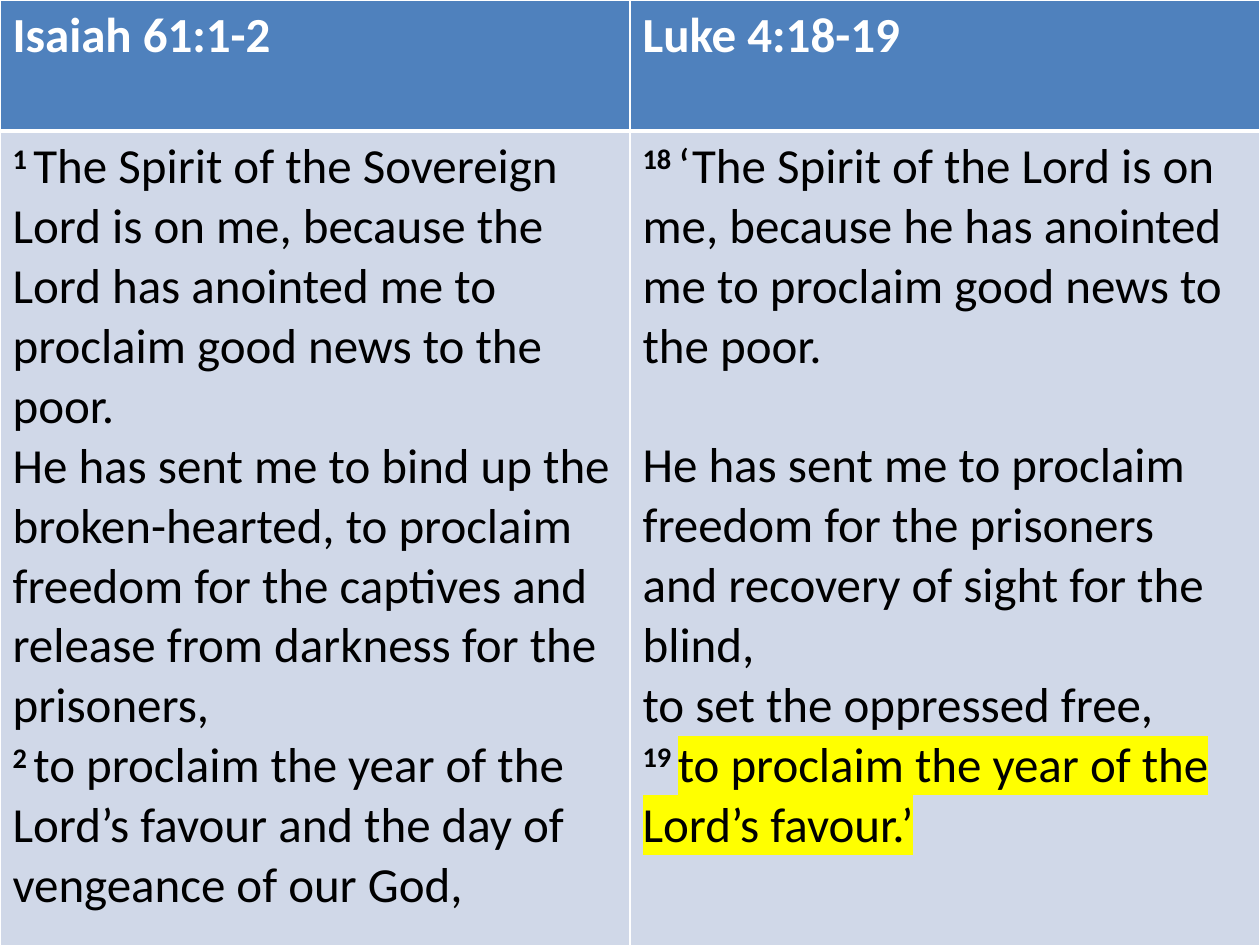
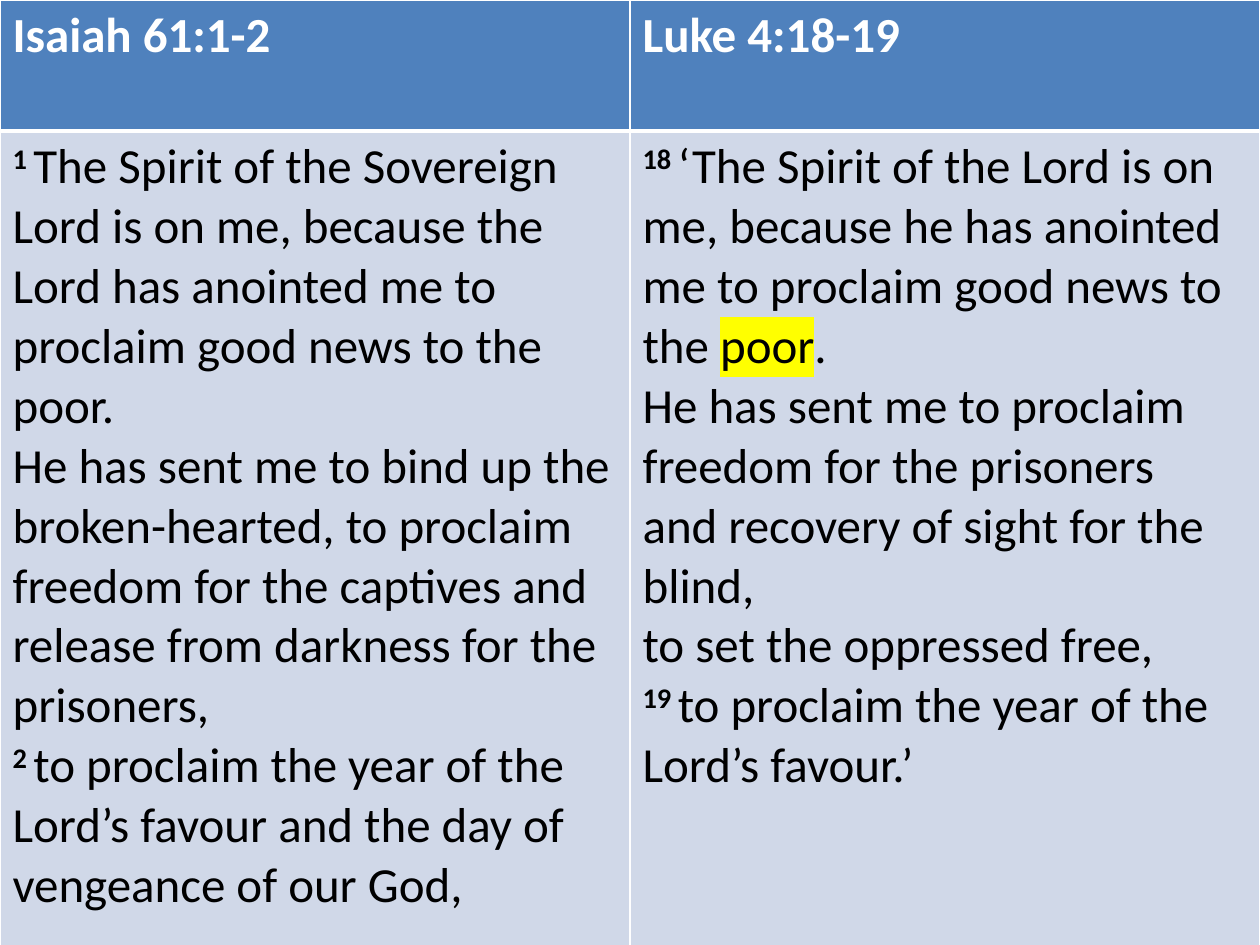
from dataclasses import dataclass

from pptx import Presentation
from pptx.dml.color import RGBColor
from pptx.oxml.ns import qn
from pptx.util import Inches, Pt
from lxml.etree import SubElement, Element

# Run styles
VERSE, PLAIN, MARK = "verse", "plain", "mark"

HEADS = ["Isaiah 61:1-2", "Luke 4:18-19"]

# A passage is a list of paragraphs; a paragraph is a list of (text, style) runs.
ISAIAH = [[
    ("1 ", VERSE),
    ("The Spirit of the Sovereign Lord is on me, because the Lord has "
     "anointed me to proclaim good news to the poor.\n"
     "He has sent me to bind up the broken-hearted, to proclaim freedom for "
     "the captives and release from darkness for the prisoners, \n", PLAIN),
    ("2 ", VERSE),
    ("to proclaim the year of the Lord’s favour and the day of vengeance "
     "of our God,", PLAIN),
]]

GOOD_NEWS = ("‘The Spirit of the Lord is on me, because he has anointed me to "
             "proclaim good news to the ")
FREEDOM = ("He has sent me to proclaim freedom for the prisoners\n"
           "and recovery of sight for the blind,\n"
           "to set the oppressed free,\n")
FAVOUR = "to proclaim the year of the Lord’s favour.’"

LUKE_FAVOUR = [
    [("18 ", VERSE), (GOOD_NEWS + "poor.", PLAIN)],
    [(FREEDOM, PLAIN), ("19 ", VERSE), (FAVOUR, MARK)],
]
LUKE_POOR = [[
    ("18 ", VERSE), (GOOD_NEWS, PLAIN), ("poor", MARK),
    (".\n" + FREEDOM, PLAIN), ("19 ", VERSE), (FAVOUR, PLAIN),
]]

SLIDES = [(ISAIAH, LUKE_FAVOUR), (ISAIAH, LUKE_POOR)]


@dataclass(frozen=True)
class Theme:
    font: str = "Calibri"
    size: int = 28
    gap: int = 34  # one line of text
    head: str = "4F81BD"
    body: str = "D0D8E8"
    light: str = "FFFFFF"
    dark: str = "000000"
    mark: str = "FFFF00"
    thin: int = 1
    thick: int = 3


THEME = Theme()
WIDTH, HEIGHT = 10, 7.5
ROWS = [1.04, 6.63]


def add_color(parent, tag, color):
    SubElement(SubElement(parent, qn(tag)), qn("a:srgbClr"), val=color)


def style_run(run, color, bold, style=PLAIN):
    font = run.font
    font.name, font.size, font.bold = THEME.font, Pt(THEME.size), bold
    font.color.rgb = RGBColor.from_string(color)
    props = run._r.get_or_add_rPr()
    if style == VERSE:
        props.set("baseline", "30000")
    if style == MARK:
        holder = Element("holder")
        add_color(holder, "a:highlight", THEME.mark)
        props.find(qn("a:latin")).addprevious(holder[0])


def style_cell(cell, fill, bottom):
    """Draw the four borders, then the fill, in schema order."""
    props = cell._tc.get_or_add_tcPr()
    for side in "LRTB":
        width = bottom if side == "B" else THEME.thin
        line = SubElement(props, qn("a:ln" + side), w=str(Pt(width)))
        add_color(line, "a:solidFill", THEME.light)
    cell.fill.solid()
    cell.fill.fore_color.rgb = RGBColor.from_string(fill)


def write_head(cell, text):
    cell.text_frame.text = text
    style_run(cell.text_frame.paragraphs[0].runs[0], THEME.light, True)
    style_cell(cell, THEME.head, THEME.thick)


def write_passage(cell, passage):
    frame = cell.text_frame
    for i, parts in enumerate(passage):
        para = frame.add_paragraph() if i else frame.paragraphs[0]
        if i:
            para.space_before = Pt(THEME.gap)
        for text, style in parts:
            for j, line in enumerate(text.split("\n")):
                if j:
                    para.add_line_break()
                if line:
                    run = para.add_run()
                    run.text = line
                    style_run(run, THEME.dark, style == VERSE, style)
    style_cell(cell, THEME.body, THEME.thin)


def add_slide(deck, passages):
    slide = deck.slides.add_slide(deck.slide_layouts[6])
    table = slide.shapes.add_table(
        len(ROWS), len(HEADS), 0, 0, Inches(WIDTH), Inches(sum(ROWS))).table
    for row, height in zip(table.rows, ROWS):
        row.height = Inches(height)
    for col, (head, passage) in enumerate(zip(HEADS, passages)):
        table.columns[col].width = Inches(WIDTH / len(HEADS))
        write_head(table.cell(0, col), head)
        write_passage(table.cell(1, col), passage)


def main():
    deck = Presentation()
    deck.slide_width, deck.slide_height = Inches(WIDTH), Inches(HEIGHT)
    for passages in SLIDES:
        add_slide(deck, passages)
    deck.save("out.pptx")


if __name__ == "__main__":
    main()
